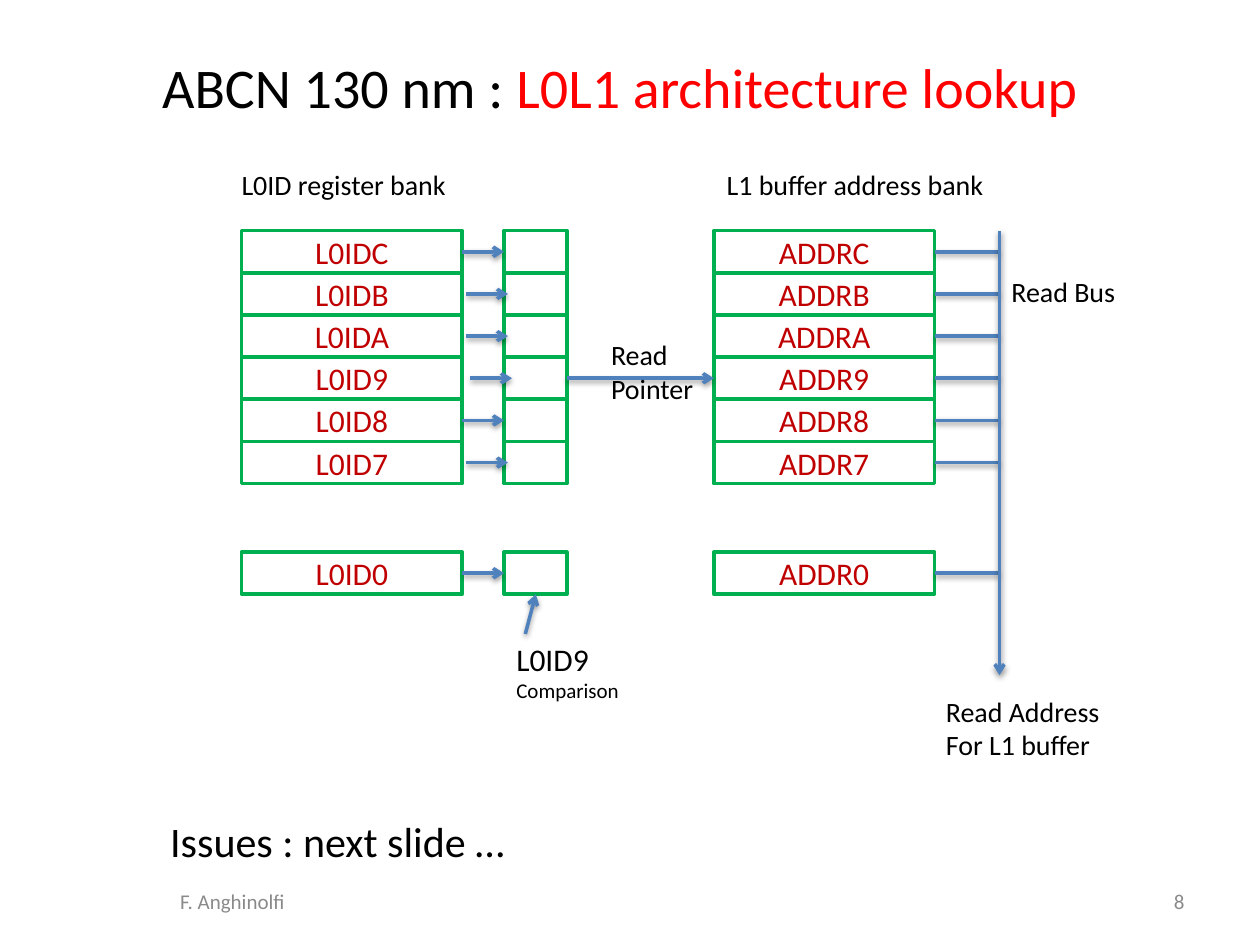
"""Build the slide on the L0L1 architecture lookup of the ABCN 130 nm chip."""
from dataclasses import dataclass

from lxml.etree import SubElement
from pptx import Presentation
from pptx.dml.color import RGBColor
from pptx.enum.shapes import MSO_CONNECTOR, MSO_SHAPE
from pptx.enum.text import MSO_ANCHOR, PP_ALIGN
from pptx.oxml import parse_xml
from pptx.oxml.ns import nsdecls, qn
from pptx.util import Cm, Pt


@dataclass(frozen=True)
class Theme:
    font: str = "Calibri"
    black: RGBColor = RGBColor(0x00, 0x00, 0x00)
    white: RGBColor = RGBColor(0xFF, 0xFF, 0xFF)
    red: RGBColor = RGBColor(0xFF, 0x00, 0x00)
    dark_red: RGBColor = RGBColor(0xC0, 0x00, 0x00)
    green: RGBColor = RGBColor(0x00, 0xB0, 0x50)
    blue: RGBColor = RGBColor(0x4F, 0x81, 0xBD)
    grey: RGBColor = RGBColor(0x8A, 0x8A, 0x8A)
    title: int = 32
    issues: int = 24
    cell: int = 18
    label: int = 16
    small: int = 12
    line: int = 2


theme = Theme()
SHADOW = (
    f'<a:effectLst {nsdecls("a")}>'
    '<a:outerShdw blurRad="40000" dist="20000" dir="5400000" rotWithShape="0">'
    '<a:srgbClr val="000000"><a:alpha val="38000"/></a:srgbClr>'
    '</a:outerShdw></a:effectLst>'
)


def add_text(box, lines, wrap=False, align=PP_ALIGN.LEFT, anchor=MSO_ANCHOR.TOP):
    """Add a text box; each line is a list of (text, size, colour) runs."""
    tf = s.shapes.add_textbox(*map(Cm, box)).text_frame
    tf.word_wrap = wrap
    tf.vertical_anchor = anchor
    for i, runs in enumerate(lines):
        p = tf.add_paragraph() if i else tf.paragraphs[0]
        p.alignment = align
        for text, size, color in runs:
            r = p.add_run()
            r.text = text
            r.font.name = theme.font
            r.font.size = Pt(size)
            r.font.color.rgb = color
    return tf


def add_wire(x1, y1, x2, y2, arrow=True):
    """Add a shadowed line, with an arrowhead at its end if asked."""
    wire = s.shapes.add_connector(MSO_CONNECTOR.STRAIGHT, *map(Cm, (x1, y1, x2, y2)))
    wire.line.color.rgb = theme.blue
    wire.line.width = Pt(theme.line)
    if arrow:
        SubElement(wire.line._get_or_add_ln(), qn("a:tailEnd"), type="arrow")
    wire._element.spPr.append(parse_xml(SHADOW))


prs = Presentation()
prs.slide_width, prs.slide_height = Cm(25.4), Cm(19.05)
s = prs.slides.add_slide(prs.slide_layouts[6])

tf = add_text((1.07, 0.76, 22.86, 3.18),
              [[("ABCN 130 nm : ", theme.title, theme.black),
                ("L0L1 architecture lookup", theme.title, theme.red)]],
              wrap=True, align=PP_ALIGN.CENTER)
tf.margin_top = Cm(0.3)

top, row_h, last_top = 4.65, 0.85, 11.13
bank_w, compare_w = 4.45, 1.27
l0_x, compare_x, addr_x, bus_x = 4.87, 10.16, 14.39, 20.15
rows = [(name, top + i * row_h) for i, name in enumerate("CBA987")]
rows.append(("0", last_top))
arrow_shifts = [0, 0.08, 0.08, 0.16, 0, 0.08, 0]

for name, y in rows:
    for x, w, text in ((l0_x, bank_w, f"L0ID{name}"),
                       (compare_x, compare_w, ""),
                       (addr_x, bank_w, f"ADDR{name}")):
        sp = s.shapes.add_shape(MSO_SHAPE.RECTANGLE, Cm(x), Cm(y), Cm(w), Cm(row_h))
        sp.shadow.inherit = False
        sp.fill.solid()
        sp.fill.fore_color.rgb = theme.white
        sp.line.color.rgb = theme.green
        sp.line.width = Pt(theme.line)
        if text:
            tf = sp.text_frame
            tf.text = text
            tf.word_wrap = False
            tf.vertical_anchor = MSO_ANCHOR.MIDDLE
            p = tf.paragraphs[0]
            p.alignment = PP_ALIGN.CENTER
            p.font.name = theme.font
            p.font.size = Pt(theme.cell)
            p.font.color.rgb = theme.dark_red

for (name, y), shift in zip(rows, arrow_shifts):
    mid = y + row_h / 2
    add_wire(l0_x + bank_w + shift, mid, compare_x + shift, mid)
    add_wire(addr_x + bank_w, mid, bus_x, mid, arrow=False)
    if name == "9":
        add_wire(compare_x + compare_w, mid, addr_x, mid)

add_wire(bus_x, top, bus_x, 13.61)
add_wire(10.59, 12.78, 10.8, last_top + row_h)

labels = [
    ((4.62, 3.25, 4.67, 0.94), ["L0ID register bank"]),
    ((14.4, 3.25, 5.74, 0.94), ["L1 buffer address bank"]),
    ((12.07, 6.68, 2.18, 1.63), ["Read", "Pointer"]),
    ((20.14, 5.41, 2.64, 0.94), ["Read Bus"]),
    ((18.82, 13.87, 3.66, 1.63), ["Read Address", "For L1 buffer"]),
]
for box, lines in labels:
    add_text(box, [[(line, theme.label, theme.black)] for line in lines])

add_text((10.16, 12.78, 3.18, 1.55),
         [[("L0ID9", theme.cell, theme.black)],
          [("Comparison", theme.small, theme.black)]], wrap=True)
add_text((3.18, 16.31, 7.37, 1.27),
         [[("Issues : next slide …", theme.issues, theme.black)]])

for box, text, align in (((0.66, 17.65, 8.05, 1.02), "F. Anghinolfi", PP_ALIGN.CENTER),
                         ((18.21, 17.65, 5.92, 1.02), "8", PP_ALIGN.RIGHT)):
    add_text(box, [[(text, theme.small, theme.grey)]], wrap=True,
             align=align, anchor=MSO_ANCHOR.MIDDLE)

prs.save("out.pptx")
